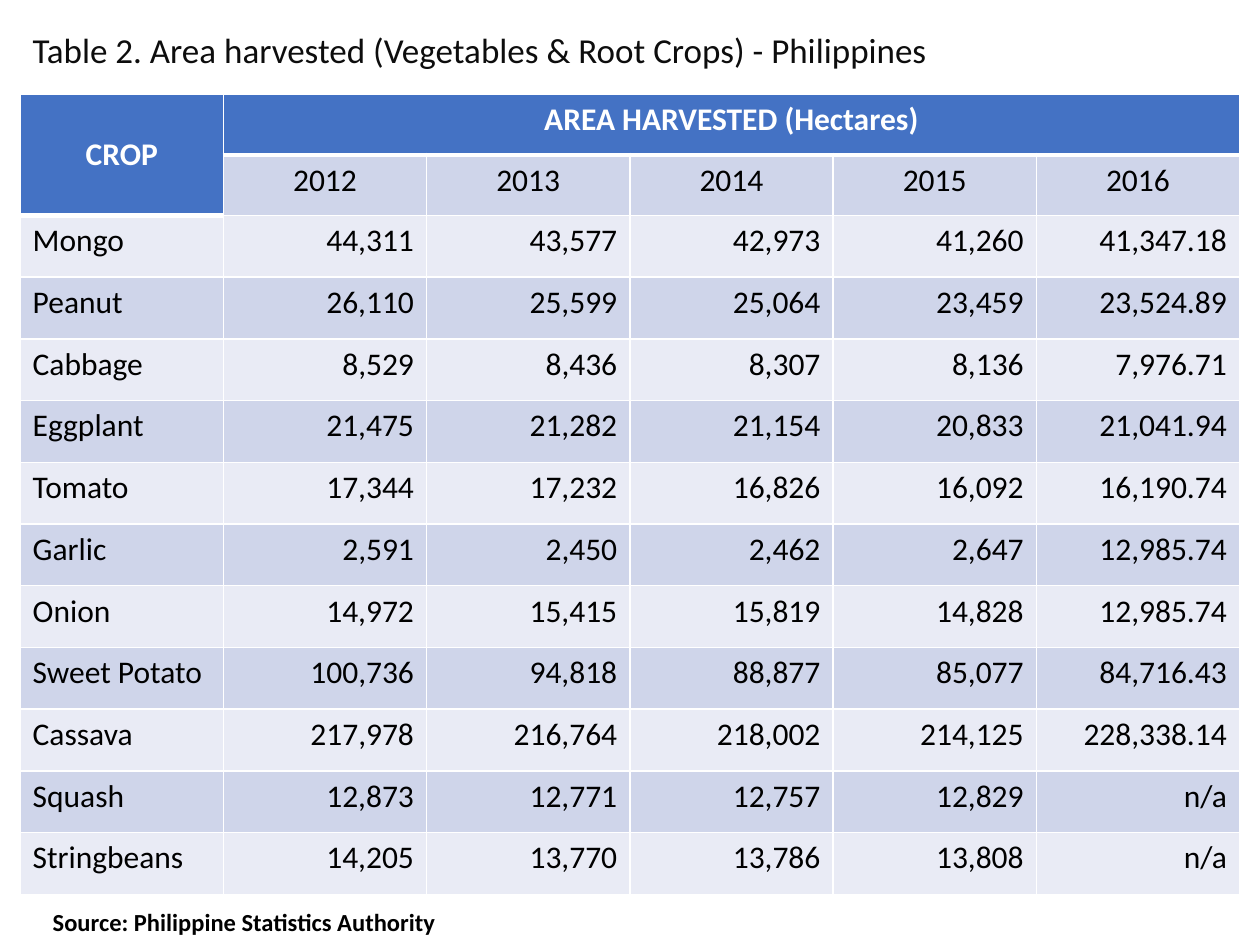
import pptx
import pptx.dml.color
import pptx.enum.text
import pptx.oxml
import pptx.oxml.ns
import pptx.util
from pptx.util import Inches

ALIGN = pptx.enum.text.PP_ALIGN
ANCHOR = pptx.enum.text.MSO_ANCHOR

THEME = {
    "font": "Calibri",
    "colors": {"title": "0D0D0D", "text": "000000", "white": "FFFFFF",
               "header": "4472C4", "dark_band": "CFD5EA", "light_band": "E9EBF5"},
    "sizes": {"title": 20, "table": 18, "source": 14},
}

YEARS = ["2012", "2013", "2014", "2015", "2016"]
CROPS = [
    ["Mongo", "44,311", "43,577", "42,973", "41,260", "41,347.18"],
    ["Peanut", "26,110", "25,599", "25,064", "23,459", "23,524.89"],
    ["Cabbage", "8,529", "8,436", "8,307", "8,136", "7,976.71"],
    ["Eggplant", "21,475", "21,282", "21,154", "20,833", "21,041.94"],
    ["Tomato", "17,344", "17,232", "16,826", "16,092", "16,190.74"],
    ["Garlic", "2,591", "2,450", "2,462", "2,647", "12,985.74"],
    ["Onion", "14,972", "15,415", "15,819", "14,828", "12,985.74"],
    ["Sweet Potato", "100,736", "94,818", "88,877", "85,077", "84,716.43"],
    ["Cassava", "217,978", "216,764", "218,002", "214,125", "228,338.14"],
    ["Squash", "12,873", "12,771", "12,757", "12,829", "n/a"],
    ["Stringbeans", "14,205", "13,770", "13,786", "13,808", "n/a"],
]


def write_text(text_frame, text, size, color, bold=False, alignment=ALIGN.LEFT):
    paragraph = text_frame.paragraphs[0]
    paragraph.alignment = alignment
    run = paragraph.add_run()
    run.text = text
    font_format = {"name": THEME["font"], "bold": bold,
                   "size": pptx.util.Pt(THEME["sizes"][size])}
    for name, value in font_format.items():
        setattr(run.font, name, value)
    run.font.color.rgb = pptx.dml.color.RGBColor.from_string(THEME["colors"][color])
    return paragraph


def style_cell(cell, fill, top_width, bottom_width):
    cell.fill.solid()
    cell.fill.fore_color.rgb = pptx.dml.color.RGBColor.from_string(THEME["colors"][fill])
    properties = cell._tc.get_or_add_tcPr()
    # Border lines must come before the fill, in this order
    widths = {"lnL": 1, "lnR": 1, "lnT": top_width, "lnB": bottom_width}
    for position, (side, width) in enumerate(widths.items()):
        properties.insert(position, pptx.oxml.parse_xml(
            f'<a:{side} {pptx.oxml.ns.nsdecls("a")} w="{pptx.util.Pt(width)}">'
            f'<a:solidFill><a:srgbClr val="{THEME["colors"]["white"]}"/></a:solidFill>'
            f'</a:{side}>'))


presentation = pptx.Presentation()
presentation.slide_width = Inches(10)
presentation.slide_height = Inches(7.5)
slide = presentation.slides.add_slide(presentation.slide_layouts[6])

# Title
title = slide.shapes.add_textbox(Inches(0.16), Inches(0.08), Inches(9.02), Inches(0.67))
title.text_frame.word_wrap = True
title.text_frame.vertical_anchor = ANCHOR.MIDDLE
paragraph = write_text(title.text_frame,
                       "Table 2. Area harvested (Vegetables & Root Crops) - Philippines",
                       "title", "title")
paragraph.line_spacing = 0.9

# Table grid
rows = [["CROP", "AREA HARVESTED (Hectares)", "", "", "", ""], ["", *YEARS], *CROPS]
table = slide.shapes.add_table(len(rows), len(rows[0]), Inches(0.16), Inches(0.75),
                               Inches(9.68), Inches(6.35)).table
for column in table.columns:
    column.width = Inches(9.68 / len(rows[0]))
for index, row in enumerate(table.rows):
    row.height = Inches(0.48 if index < 2 else 0.49)

# Table cells
for row_index, values in enumerate(rows):
    for column_index, value in enumerate(values):
        cell = table.cell(row_index, column_index)
        header_rows = 2 if column_index == 0 else 1
        is_header = row_index < header_rows
        band = "dark_band" if row_index % 2 else "light_band"
        style_cell(cell, "header" if is_header else band,
                   top_width=3 if row_index == header_rows else 1,
                   bottom_width=3 if row_index == header_rows - 1 else 1)
        if value:
            if row_index < 2:
                alignment = ALIGN.CENTER
            else:
                alignment = ALIGN.RIGHT if column_index else ALIGN.LEFT
            write_text(cell.text_frame, value, "table",
                       "white" if is_header else "text", is_header, alignment)

# Merged headings
table.cell(0, 0).merge(table.cell(1, 0))
table.cell(0, 0).vertical_anchor = ANCHOR.MIDDLE
table.cell(0, 1).merge(table.cell(0, len(YEARS)))

# Source line
source = slide.shapes.add_textbox(Inches(0.32), Inches(7.15), Inches(4.84), Inches(0.34))
source.text_frame.word_wrap = True
write_text(source.text_frame, "Source: Philippine Statistics Authority",
           "source", "text", bold=True)

presentation.save("out.pptx")
